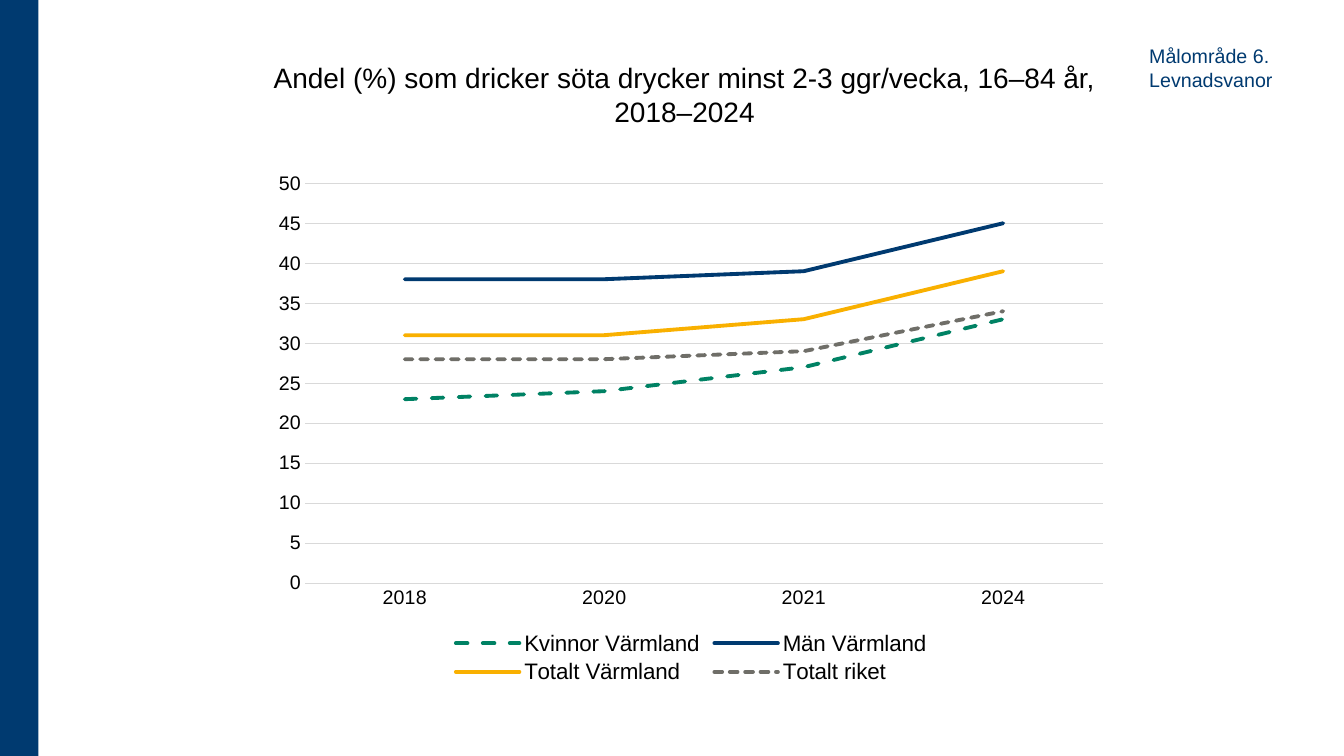
import pptx
import pptx.chart.data
import pptx.dml.color
import pptx.enum.chart
import pptx.enum.dml
import pptx.enum.shapes
import pptx.enum.text
import pptx.oxml
import pptx.oxml.ns
import pptx.util
from dataclasses import dataclass

Inches = pptx.util.Inches
Dash = pptx.enum.dml.MSO_LINE

TITLE = "Andel (%) som dricker söta drycker minst 2-3 ggr/vecka, 16–84 år, 2018–2024"
TARGET_AREA = ["Målområde 6.", "Levnadsvanor"]
YEARS = ["2018", "2020", "2021", "2024"]
PLOT_SHARE = {"x": 0.05, "y": 0.04, "w": 0.93, "h": 0.76}


@dataclass(frozen=True)
class Theme:
    font: str = "Arial"
    black: str = "000000"
    navy: str = "003A70"
    green: str = "008264"
    yellow: str = "F9B000"
    gray: str = "6F6E68"
    grid: str = "D9D9D9"
    title_size: int = 20
    legend_size: int = 16
    label_size: int = 14
    chart_size: int = 10
    series_width: float = 2.75
    grid_width: float = 0.75


THEME = Theme()
SERIES = [
    ("Kvinnor Värmland", (23, 24, 27, 33), THEME.green, Dash.DASH),
    ("Män Värmland", (38, 38, 39, 45), THEME.navy, Dash.SOLID),
    ("Totalt Värmland", (31, 31, 33, 39), THEME.yellow, Dash.SOLID),
    ("Totalt riket", (28, 28, 29, 34), THEME.gray, Dash.SQUARE_DOT),
]


def rgb(color):
    return pptx.dml.color.RGBColor.from_string(color)


def style_font(font, size, color=THEME.black):
    font.name = THEME.font
    font.size = pptx.util.Pt(size)
    font.bold = False
    font.color.rgb = rgb(color)


def style_line(line, color, width):
    line.color.rgb = rgb(color)
    line.width = pptx.util.Pt(width)


def add_side_band(slide, height):
    band = slide.shapes.add_shape(
        pptx.enum.shapes.MSO_SHAPE.RECTANGLE, 0, 0, Inches(0.38), height)
    band.shadow.inherit = False
    band.fill.solid()
    band.fill.fore_color.rgb = rgb(THEME.navy)
    band.line.fill.background()


def set_title(slide):
    title = slide.shapes.title
    title.left, title.top = Inches(2.6), Inches(0.67)
    title.width, title.height = Inches(8.38), Inches(0.65)
    frame = title.text_frame
    frame.text = TITLE
    frame.word_wrap = True
    frame.auto_size = pptx.enum.text.MSO_AUTO_SIZE.NONE
    frame.vertical_anchor = pptx.enum.text.MSO_ANCHOR.BOTTOM
    para = frame.paragraphs[0]
    para.alignment = pptx.enum.text.PP_ALIGN.CENTER
    style_font(para.runs[0].font, THEME.title_size)


def add_target_area(slide):
    box = slide.shapes.add_textbox(
        Inches(11.3), Inches(0.39), Inches(1.66), Inches(0.57))
    frame = box.text_frame
    frame.word_wrap = True
    frame.auto_size = pptx.enum.text.MSO_AUTO_SIZE.SHAPE_TO_FIT_TEXT
    frame.text = "\n".join(TARGET_AREA)
    for para in frame.paragraphs:
        style_font(para.runs[0].font, THEME.label_size, THEME.navy)


def place_plot(chart):
    """Fix the inner plot area as shares of the chart's size."""
    ns = pptx.oxml.ns
    plot_area = chart._chartSpace.find(".//" + ns.qn("c:plotArea"))
    for old in plot_area.findall(ns.qn("c:layout")):
        plot_area.remove(old)
    modes = '<c:xMode val="edge"/><c:yMode val="edge"/>'
    shares = "".join(f'<c:{key} val="{share}"/>' for key, share in PLOT_SHARE.items())
    plot_area.insert(0, pptx.oxml.parse_xml(
        f'<c:layout {ns.nsdecls("c")}><c:manualLayout><c:layoutTarget val="inner"/>'
        f"{modes}{shares}</c:manualLayout></c:layout>"))


def style_axes(chart):
    for axis in (chart.category_axis, chart.value_axis):
        axis.major_tick_mark = pptx.enum.chart.XL_TICK_MARK.NONE
        axis.minor_tick_mark = pptx.enum.chart.XL_TICK_MARK.NONE
        style_font(axis.tick_labels.font, THEME.label_size)
    style_line(chart.category_axis.format.line, THEME.grid, THEME.grid_width)
    values = chart.value_axis
    values.minimum_scale, values.maximum_scale, values.major_unit = 0, 50, 5
    values.tick_labels.number_format = "0"
    values.tick_labels.number_format_is_linked = False
    values.format.line.fill.background()
    values.has_major_gridlines = True
    style_line(values.major_gridlines.format.line, THEME.grid, THEME.grid_width)


def add_drinks_chart(slide):
    data = pptx.chart.data.CategoryChartData(number_format="0")
    data.categories = YEARS
    for name, shares, _, _ in SERIES:
        data.add_series(name, shares)
    chart = slide.shapes.add_chart(
        pptx.enum.chart.XL_CHART_TYPE.LINE, Inches(2.6), Inches(1.61),
        Inches(8.51), Inches(5.22), data).chart
    style_font(chart.font, THEME.chart_size)
    chart.has_title = False
    chart.has_legend = True
    chart.legend.position = pptx.enum.chart.XL_LEGEND_POSITION.BOTTOM
    chart.legend.include_in_layout = False
    style_font(chart.legend.font, THEME.legend_size)
    chart.plots[0].vary_by_categories = False
    for series, (_, _, color, dash) in zip(chart.plots[0].series, SERIES):
        series.smooth = False
        series.marker.style = pptx.enum.chart.XL_MARKER_STYLE.NONE
        style_line(series.format.line, color, THEME.series_width)
        series.format.line.dash_style = dash
        line = series.format.line._ln
        line.set("cap", "rnd")
    style_axes(chart)
    place_plot(chart)


def main():
    deck = pptx.Presentation()
    deck.slide_width, deck.slide_height = Inches(13.33), Inches(7.5)
    slide = deck.slides.add_slide(deck.slide_layouts.get_by_name("Title Only"))
    add_side_band(slide, deck.slide_height)
    set_title(slide)
    add_drinks_chart(slide)
    add_target_area(slide)
    deck.save("out.pptx")


if __name__ == "__main__":
    main()
